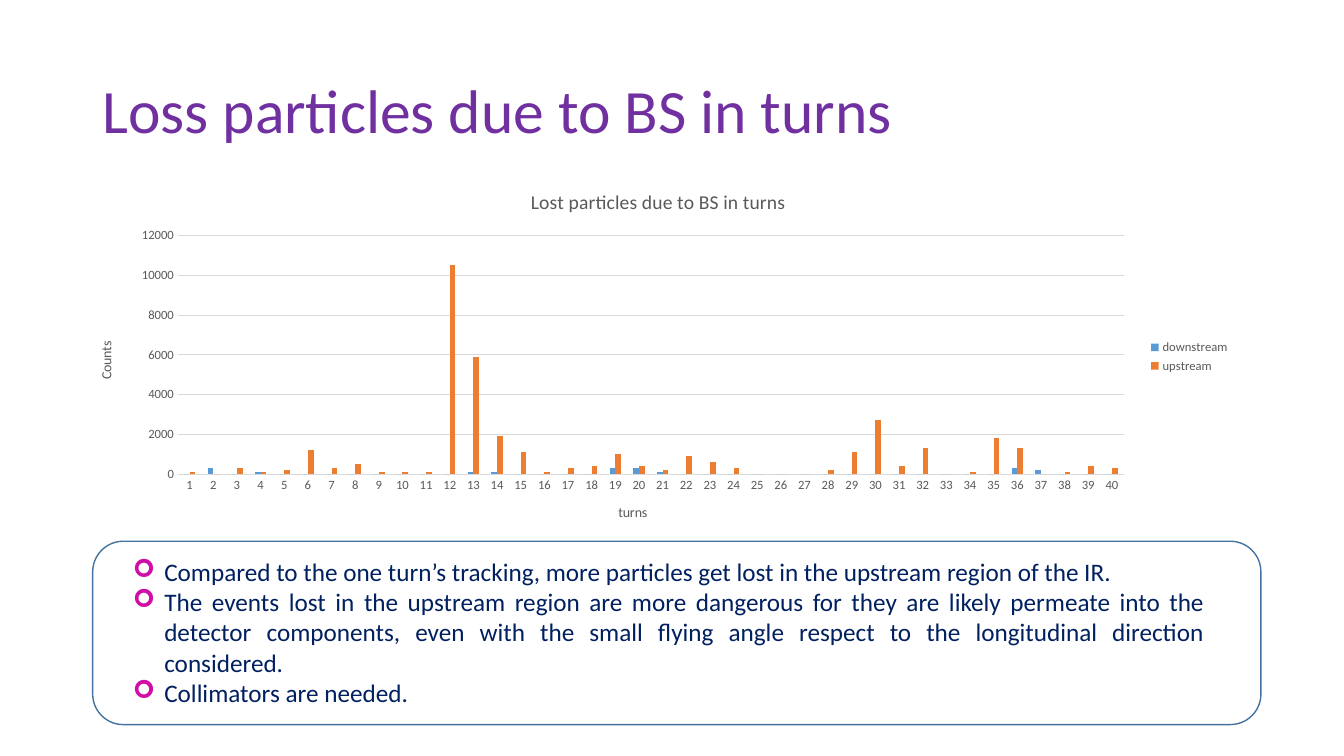
from dataclasses import dataclass

from lxml import etree
from pptx import Presentation
from pptx.chart.data import CategoryChartData
from pptx.dml.color import RGBColor
from pptx.enum.chart import XL_CHART_TYPE, XL_LEGEND_POSITION, XL_TICK_MARK
from pptx.enum.shapes import MSO_SHAPE
from pptx.enum.text import MSO_ANCHOR, PP_ALIGN
from pptx.oxml.ns import qn
from pptx.util import Pt

COLUMNS = XL_CHART_TYPE.COLUMN_CLUSTERED
LEGEND_RIGHT = XL_LEGEND_POSITION.RIGHT
NO_TICK = XL_TICK_MARK.NONE
ROUNDED = MSO_SHAPE.ROUNDED_RECTANGLE
MIDDLE = MSO_ANCHOR.MIDDLE
JUSTIFY = PP_ALIGN.JUSTIFY


@dataclass(frozen=True)
class Theme:
    font: str = "Calibri"
    heading: str = "7030A0"
    body: str = "002060"
    bullet: str = "D10DA7"
    frame: str = "43739E"
    chart_text: str = "595959"
    grid: str = "D9D9D9"
    series: tuple = ("5B9BD5", "ED7D31")
    heading_size: float = 44
    body_size: float = 18
    chart_title_size: float = 14
    axis_title_size: float = 10
    label_size: float = 9


TURNS = range(1, 41)
DOWNSTREAM_LOSSES = {2: 300, 4: 100, 13: 100, 14: 100, 19: 300, 20: 300,
                     21: 100, 36: 300, 37: 200}
UPSTREAM_LOSSES = [
    100, 0, 300, 100, 200, 1200, 300, 500, 100, 100,
    100, 10500, 5900, 1900, 1100, 100, 300, 400, 1000, 400,
    200, 900, 600, 300, 0, 0, 0, 200, 1100, 2700,
    400, 1300, 0, 100, 1800, 1300, 0, 100, 400, 300,
]
LOSSES = {
    "downstream": [DOWNSTREAM_LOSSES.get(turn, 0) for turn in TURNS],
    "upstream": UPSTREAM_LOSSES,
}
FINDINGS = [
    "Compared to the one turn’s tracking, more particles get lost in the "
    "upstream region of the IR.",
    "The events lost in the upstream region are more dangerous for they are "
    "likely permeate into the detector components, even with the small flying "
    "angle respect to the longitudinal direction considered.",
    "Collimators are needed.",
]


def apply(target, formats):
    for attribute, value in formats.items():
        setattr(target, attribute, value)


def rgb(color):
    return RGBColor.from_string(color)


class SlideBuilder:
    def __init__(self, slide, theme):
        self.shapes = slide.shapes
        self.theme = theme

    def style_font(self, font, size, color):
        apply(font, {"name": self.theme.font, "size": Pt(size), "bold": False})
        font.color.rgb = rgb(color)

    def style_line(self, line, color, width):
        line.color.rgb = rgb(color)
        line.width = Pt(width)

    def text_frame(self, box):
        frame = self.shapes.add_textbox(*map(Pt, box)).text_frame
        frame.word_wrap = True
        return frame

    def heading(self, text, box):
        frame = self.text_frame(box)
        frame.vertical_anchor = MIDDLE
        paragraph = frame.paragraphs[0]
        apply(paragraph, {"text": text, "line_spacing": 0.9})
        self.style_font(paragraph.runs[0].font, self.theme.heading_size, self.theme.heading)

    def bullets(self, items, box, indent):
        frame = self.text_frame(box)
        for index, item in enumerate(items):
            paragraph = frame.add_paragraph() if index else frame.paragraphs[0]
            apply(paragraph, {"text": item, "alignment": JUSTIFY})
            self.add_bullet(paragraph, indent)
            self.style_font(paragraph.runs[0].font, self.theme.body_size, self.theme.body)

    def add_bullet(self, paragraph, indent):
        properties = paragraph._p.get_or_add_pPr()
        properties.set("marL", str(Pt(indent)))
        properties.set("indent", str(-Pt(indent)))
        color = etree.SubElement(properties, qn("a:buClr"))
        etree.SubElement(color, qn("a:srgbClr"), val=self.theme.bullet)
        etree.SubElement(properties, qn("a:buFont"), typeface="Wingdings")
        etree.SubElement(properties, qn("a:buChar"), char="➢")

    def frame(self, box):
        outline = self.shapes.add_shape(ROUNDED, *map(Pt, box))
        outline.shadow.inherit = False
        outline.fill.background()
        self.style_line(outline.line, self.theme.frame, 1)

    def chart_heading(self, titled, text, size):
        """Title a chart or an axis."""
        frame = titled.text_frame
        frame.text = text
        self.style_font(frame.paragraphs[0].runs[0].font, size, self.theme.chart_text)

    def axis(self, axis, title):
        theme = self.theme
        apply(axis, {"major_tick_mark": NO_TICK, "minor_tick_mark": NO_TICK})
        self.style_font(axis.tick_labels.font, theme.label_size, theme.chart_text)
        self.chart_heading(axis.axis_title, title, theme.axis_title_size)

    def column_chart(self, title, axis_titles, categories, series, box):
        theme = self.theme
        data = CategoryChartData()
        data.categories = [str(category) for category in categories]
        for name, values in series.items():
            data.add_series(name, values)
        chart = self.shapes.add_chart(COLUMNS, *map(Pt, box), data).chart
        self.style_font(chart.font, theme.label_size, theme.chart_text)
        self.chart_heading(chart.chart_title, title, theme.chart_title_size)

        chart.has_legend = True
        apply(chart.legend, {"position": LEGEND_RIGHT, "include_in_layout": False})
        self.style_font(chart.legend.font, theme.label_size, theme.chart_text)

        for axis, axis_title in zip((chart.category_axis, chart.value_axis), axis_titles):
            self.axis(axis, axis_title)
        self.style_line(chart.category_axis.format.line, theme.grid, 0.75)
        counts = chart.value_axis
        apply(counts, {"minimum_scale": 0, "maximum_scale": 12000, "major_unit": 2000})
        counts.format.line.fill.background()
        self.style_line(counts.major_gridlines.format.line, theme.grid, 0.75)

        plot = chart.plots[0]
        apply(plot, {"gap_width": 219, "overlap": 0, "vary_by_categories": False})
        for columns, color in zip(plot.series, theme.series):
            columns.format.fill.solid()
            columns.format.fill.fore_color.rgb = rgb(color)


def main():
    presentation = Presentation()
    apply(presentation, {"slide_width": Pt(960), "slide_height": Pt(540)})
    slide = presentation.slides.add_slide(presentation.slide_layouts[6])
    builder = SlideBuilder(slide, Theme())
    builder.heading("Loss particles due to BS in turns", (66, 29, 828, 104.4))
    builder.column_chart("Lost particles due to BS in turns", ("turns", "Counts"),
                         TURNS, LOSSES, (54.7, 123, 831, 263.5))
    builder.bullets(FINDINGS, (87.8, 393.8, 779.8, 116.6), indent=22.5)
    builder.frame((66.2, 386.6, 834.5, 131))
    presentation.save("out.pptx")


if __name__ == "__main__":
    main()
